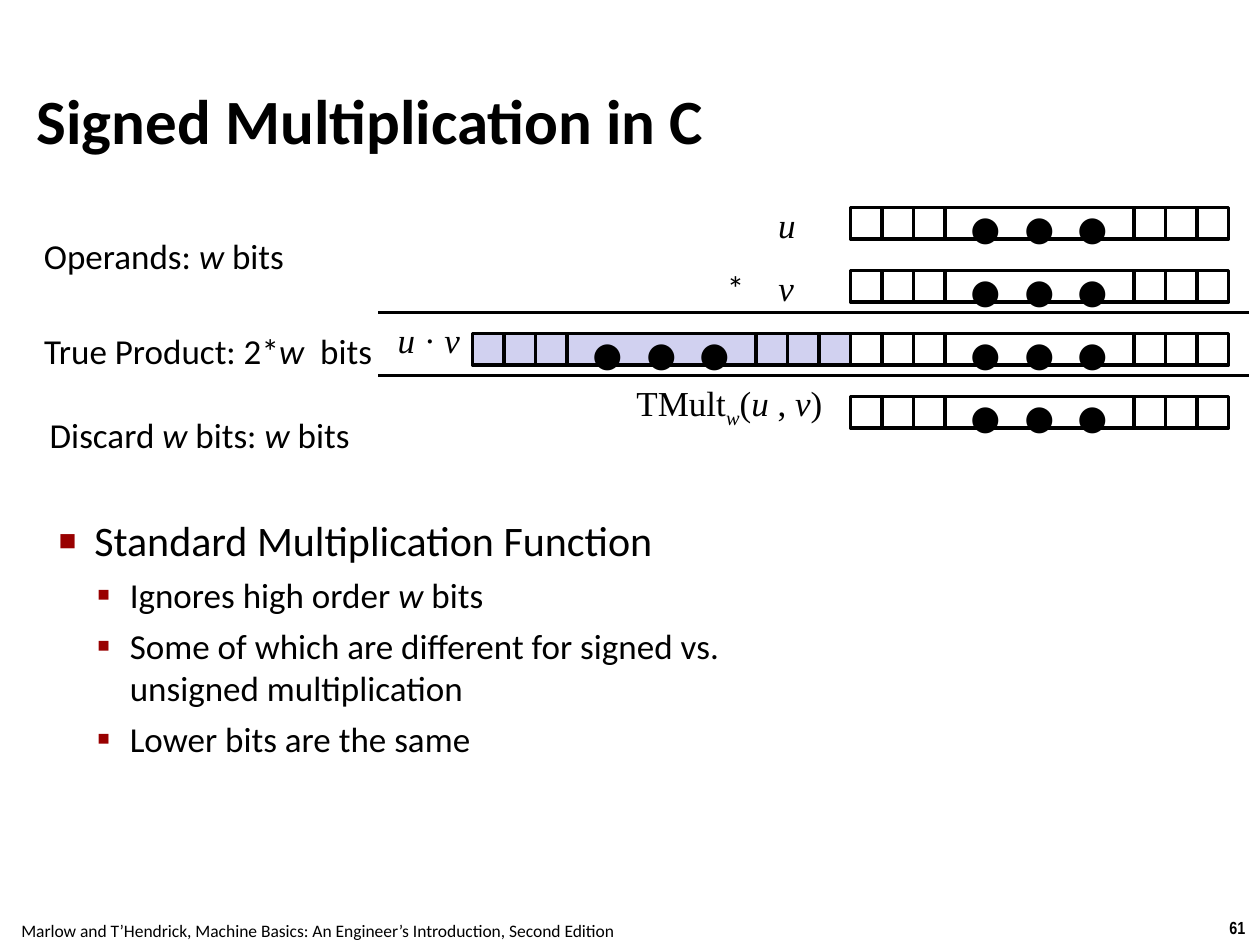
from dataclasses import dataclass

from lxml import etree
from pptx import Presentation
from pptx.dml.color import RGBColor
from pptx.enum import shapes, text
from pptx.oxml import ns
from pptx.util import Pt

COLORS = {"ink": "000000", "paper": "FFFFFF", "high_bits": "D1D1F0", "bullet": "990000"}
SANS, SERIF, NARROW = "Calibri", "Times New Roman", "Arial Narrow"
LEFT, CENTER, RIGHT = text.PP_ALIGN.LEFT, text.PP_ALIGN.CENTER, text.PP_ALIGN.RIGHT

BIT = 18           # side of one bit cell
EDGE_BITS = 3      # single cells at each end of a word
GAP_BITS = 6       # width of the cell with the dots, in bits
LOW_X, HIGH_X = 486, 270
ROW_TOP, ROW_STEP = 118.5, 36
RULE_X, RULE_Y = (216, 714), (178.5, 214.5)


@dataclass
class Run:
    text: str
    italic: bool = False
    subscript: bool = False


@dataclass
class Label:
    box: tuple[float, float, float, float]
    runs: list[Run]
    font: str = SANS
    size: float = 20
    bold: bool = False
    align: text.PP_ALIGN = CENTER
    wrap: bool = False


@dataclass
class Word:
    left: float
    row: int
    fill: str = "paper"


@dataclass
class Bullet:
    runs: list[Run]
    level: int = 0


@dataclass
class BulletStyle:
    mark: str
    scale: int
    size: float
    margin: float
    hanging: float
    before: float


W, U, V = (Run(letter, italic=True) for letter in "wuv")
BITS = Run(" bits")

LABELS = [
    Label((694.8, 520.6, 24.5, 19.4), [Run("61")], NARROW, 10, bold=True),
    Label((-1.4, 522, 365.8, 19.4),
          [Run("Marlow and T’Hendrick, Machine Basics: An Engineer’s Introduction, Second Edition")],
          size=10),
    Label((437.4, 112.6, 24.5, 31.7), [U], SERIF),
    Label((437.4, 148.6, 23.8, 31.7), [V], SERIF),
    Label((408.2, 148.6, 24.5, 31.7), [Run("*")]),
    Label((219.6, 178.5, 50.4, 31.7), [Run("u ", italic=True), Run("· "), V], SERIF, align=RIGHT),
    Label((354.6, 214.5, 122.4, 31.7),
          [Run("TMult"), Run("w", italic=True, subscript=True), Run("("), U, Run(" , "), V, Run(")")],
          SERIF, align=RIGHT),
    Label((17, 130.3, 153.4, 31.7), [Run("Operands: "), W, BITS]),
    Label((17, 184.6, 203.8, 31.7), [Run("True Product: 2*"), W, Run("  bits")]),
    Label((18, 232.5, 192.2, 31.7), [Run("Discard "), W, Run(" bits: "), W, BITS], wrap=True),
]
WORDS = [Word(LOW_X, row) for row in range(4)] + [Word(HIGH_X, 2, "high_bits")]

BULLET_STYLES = [
    BulletStyle("■", 44, 24, 20.25, 20.25, 6),
    BulletStyle("▪", 110, 20, 40.5, 18.75, 5),
]
BULLETS = [
    Bullet([Run("Standard Multiplication Function")]),
    Bullet([Run("Ignores high order "), W, BITS], 1),
    Bullet([Run("Some of which are different for signed vs. unsigned multiplication")], 1),
    Bullet([Run("Lower bits are the same")], 1),
]


def color(name: str) -> RGBColor:
    return RGBColor.from_string(COLORS[name])


def write(paragraph, runs: list[Run], *, font: str = SANS, size: float = 20,
          bold: bool = False, align: text.PP_ALIGN = LEFT) -> None:
    paragraph.alignment = align
    for part in runs:
        run = paragraph.add_run()
        run.text = part.text
        run.font.name, run.font.size = font, Pt(size)
        run.font.bold, run.font.italic = bold, part.italic
        run.font.color.rgb = color("ink")
        if part.subscript:
            run.font._element.set("baseline", "-25000")


def add_label(slide, label: Label) -> None:
    frame = slide.shapes.add_textbox(*map(Pt, label.box)).text_frame
    frame.word_wrap = label.wrap
    frame.auto_size = text.MSO_AUTO_SIZE.SHAPE_TO_FIT_TEXT
    write(frame.paragraphs[0], label.runs, font=label.font, size=label.size,
          bold=label.bold, align=label.align)


def add_cell(group, left: float, top: float, width: float, fill: str):
    cell = group.shapes.add_shape(shapes.MSO_SHAPE.RECTANGLE, Pt(left), Pt(top), Pt(width), Pt(BIT))
    cell.shadow.inherit = False
    cell.fill.solid()
    cell.fill.fore_color.rgb = color(fill)
    cell.line.color.rgb = color("ink")
    cell.line.width = Pt(2)
    return cell


def add_word(slide, word: Word) -> None:
    group = slide.shapes.add_group_shape()
    top = ROW_TOP + word.row * ROW_STEP
    for start in (0, EDGE_BITS + GAP_BITS):
        for bit in range(start, start + EDGE_BITS):
            add_cell(group, word.left + bit * BIT, top, BIT, word.fill)
    middle = add_cell(group, word.left + EDGE_BITS * BIT, top, GAP_BITS * BIT, word.fill)
    frame = middle.text_frame
    frame.word_wrap = False
    frame.vertical_anchor = text.MSO_ANCHOR.MIDDLE
    write(frame.paragraphs[0], [Run("• • •")], size=42, align=CENTER)


def add_rule(slide, y: float) -> None:
    start, end = RULE_X
    rule = slide.shapes.add_connector(shapes.MSO_CONNECTOR.STRAIGHT, Pt(start), Pt(y), Pt(end), Pt(y))
    rule.line.color.rgb = color("ink")
    rule.line.width = Pt(2)
    etree.SubElement(rule._element.spPr, ns.qn("a:effectLst"))


def add_bullet(paragraph, bullet: Bullet) -> None:
    style = BULLET_STYLES[bullet.level]
    paragraph.level = bullet.level
    paragraph.space_before = Pt(style.before)
    write(paragraph, bullet.runs, size=style.size)
    properties = paragraph._p.get_or_add_pPr()
    properties.set("marL", str(Pt(style.margin)))
    properties.set("indent", str(-Pt(style.hanging)))
    mark_color = etree.SubElement(properties, ns.qn("a:buClr"))
    etree.SubElement(mark_color, ns.qn("a:srgbClr"), val=COLORS["bullet"])
    etree.SubElement(properties, ns.qn("a:buSzPct"), val=str(style.scale * 1000))
    etree.SubElement(properties, ns.qn("a:buFont"), typeface=SANS)
    etree.SubElement(properties, ns.qn("a:buChar"), char=style.mark)


def add_title(slide, title: str) -> None:
    shape = slide.shapes.title
    shape.left, shape.top, shape.width, shape.height = map(Pt, (18, 46, 605.5, 44))
    frame = shape.text_frame
    frame.margin_left = frame.margin_right = frame.margin_top = frame.margin_bottom = Pt(3)
    frame.vertical_anchor = text.MSO_ANCHOR.MIDDLE
    write(frame.paragraphs[0], [Run(title)], size=36, bold=True)


def main() -> None:
    presentation = Presentation()
    presentation.slide_width, presentation.slide_height = Pt(720), Pt(540)
    slide = presentation.slides.add_slide(presentation.slide_layouts[5])

    add_title(slide, "Signed Multiplication in C")

    # Bullet list
    frame = slide.shapes.add_textbox(Pt(26.6), Pt(290.5), Pt(405.4), Pt(129.6)).text_frame
    frame.word_wrap = True
    for index, bullet in enumerate(BULLETS):
        add_bullet(frame.add_paragraph() if index else frame.paragraphs[0], bullet)

    # Multiplication diagram, with its labels and the footer
    for word in WORDS:
        add_word(slide, word)
    for y in RULE_Y:
        add_rule(slide, y)
    for label in LABELS:
        add_label(slide, label)

    presentation.save("out.pptx")


if __name__ == "__main__":
    main()
